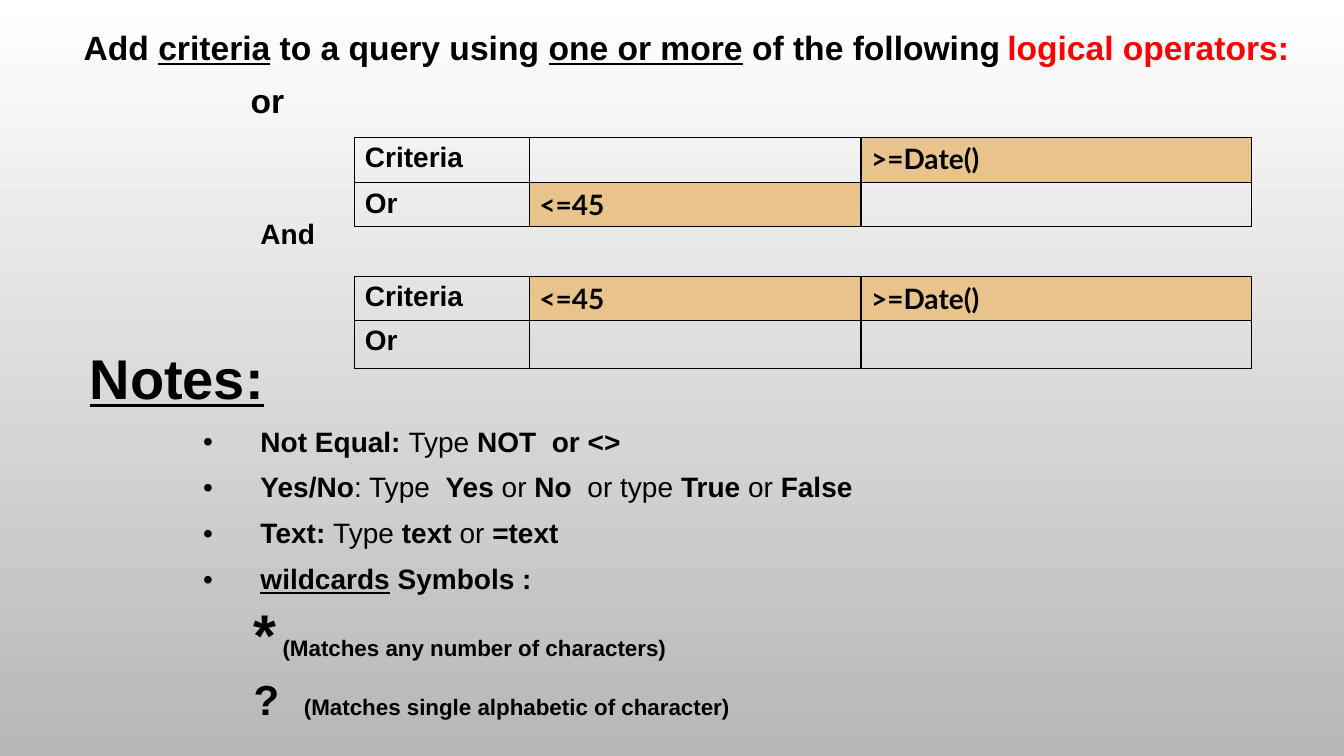
from lxml import etree
from pptx import Presentation
from pptx.dml.color import RGBColor
from pptx.enum.text import MSO_ANCHOR
from pptx.oxml.ns import qn
from pptx.util import Pt

TOP = MSO_ANCHOR.TOP
BLACK, RED, TAN = "000000", "FF0000", "E8C48C"
COLS = (124.5, 237, 279)

LINES = [
    (0.7, 0, [("Add ", 24, "b"), ("criteria", 24, "bu"),
              (" to a query using ", 24, "b"), ("one or more", 24, "bu"),
              (" of the following", 24, "b"), (" ", 18, "br"),
              ("logical operators:", 24, "br")]),
    (120, 10, [("or", 24, "b")]),
    (127, 70, [("And", 20, "b")]),
    (5, 70, [("Notes:", 40, "bu")]),
]
NOTES = [
    [("Not Equal: ", "b"), ("Type", ""), (" NOT  or <>", "b")],
    [("Yes/No", "b"), (": Type  ", ""), ("Yes ", "b"), ("or ", ""),
     ("No  ", "b"), ("or type ", ""), ("True ", "b"), ("or ", ""),
     ("False", "b")],
    [("Text: ", "b"), ("Type", ""), (" text ", "b"), ("or", ""),
     (" =text", "b")],
    [("wildcards", "bu"), (" Symbols :", "b")],
]
SIGNS = [
    ("*", 42, " (Matches any number of characters)"),
    ("?", 30, "\t(Matches single alphabetic of character)"),
]


def color(code):
    return RGBColor.from_string(code)


def style(font, size, face="Arial", marks="b"):
    font.size = Pt(size)
    font.name = face
    font.bold = "b" in marks
    font.underline = "u" in marks
    font.color.rgb = color(RED if "r" in marks else BLACK)


def add_line(frame, left, gap, runs, bullet=False, tab=None):
    para = frame.paragraphs[0]
    if para.runs:
        para = frame.add_paragraph()
    props = para._p.get_or_add_pPr()
    props.set("marL", str(Pt(left)))
    props.set("indent", str(Pt(-41 if bullet else 0)))
    para.line_spacing = 0.95
    para.space_before = Pt(gap)
    if bullet:
        tint = etree.SubElement(props, qn("a:buClr"))
        etree.SubElement(tint, qn("a:srgbClr"), val=BLACK)
        etree.SubElement(props, qn("a:buFont"), typeface="Arial")
        etree.SubElement(props, qn("a:buChar"), char="•")
    else:
        etree.SubElement(props, qn("a:buNone"))
    if tab:
        tabs = etree.SubElement(props, qn("a:tabLst"))
        etree.SubElement(tabs, qn("a:tab"), pos=str(Pt(tab)), algn="l")
    for text, size, marks in runs:
        run = para.add_run()
        run.text = text
        style(run.font, size, marks=marks)


def add_body(slide):
    frame = slide.shapes.add_textbox(Pt(52), Pt(18), Pt(888), Pt(488)).text_frame
    frame.word_wrap = True
    frame.vertical_anchor = TOP
    for left, gap, runs in LINES:
        add_line(frame, left, gap, runs)
    for note in NOTES:
        runs = [(text, 20, marks) for text, marks in note]
        add_line(frame, 127, 10, runs, bullet=True)
    for sign, size, text in SIGNS:
        tab = 153 if "\t" in text else None
        add_line(frame, 122, 5, [(sign, size, "b"), (text, 16, "b")], tab=tab)


def add_edges(cell):
    props = cell._tc.get_or_add_tcPr()
    for spot, side in enumerate(("a:lnL", "a:lnR", "a:lnT", "a:lnB")):
        line = etree.Element(qn(side), w=str(Pt(1)))
        fill = etree.SubElement(line, qn("a:solidFill"))
        etree.SubElement(fill, qn("a:srgbClr"), val=BLACK)
        props.insert(spot, line)


def add_grid(slide, top, rows, cells):
    table = slide.shapes.add_table(
        len(rows), len(COLS), Pt(253.5), Pt(top), Pt(sum(COLS)), Pt(sum(rows))).table
    table.first_row = table.horz_banding = False
    for col, width in zip(table.columns, COLS):
        col.width = Pt(width)
    for row, height, texts in zip(table.rows, rows, cells):
        row.height = Pt(height)
        for spot, (cell, text) in enumerate(zip(row.cells, texts)):
            add_edges(cell)
            if text and spot:
                cell.fill.solid()
                cell.fill.fore_color.rgb = color(TAN)
            else:
                cell.fill.background()
            if text:
                cell.text_frame.text = text
                run = cell.text_frame.paragraphs[0].runs[0]
                style(run.font, 20, "Lato" if spot else "Arial")


def add_back(slide):
    fill = slide.background.fill
    fill.gradient()
    fill.gradient_angle = 270
    for stop, code, place in zip(fill.gradient_stops, ("FFFFFF", "B7B7B7"), (0, 1)):
        stop.color.rgb = color(code)
        stop.position = place


def main():
    deck = Presentation()
    deck.slide_width, deck.slide_height = Pt(960), Pt(540)
    slide = deck.slides.add_slide(deck.slide_layouts[6])
    add_back(slide)
    add_body(slide)
    add_grid(slide, 197.5, (31.5, 34.5),
             [("Criteria", "<=45", ">=Date()"), ("Or", "", "")])
    add_grid(slide, 98, (32.5, 31),
             [("Criteria", "", ">=Date()"), ("Or", "<=45", "")])
    deck.save("out.pptx")


if __name__ == "__main__":
    main()
